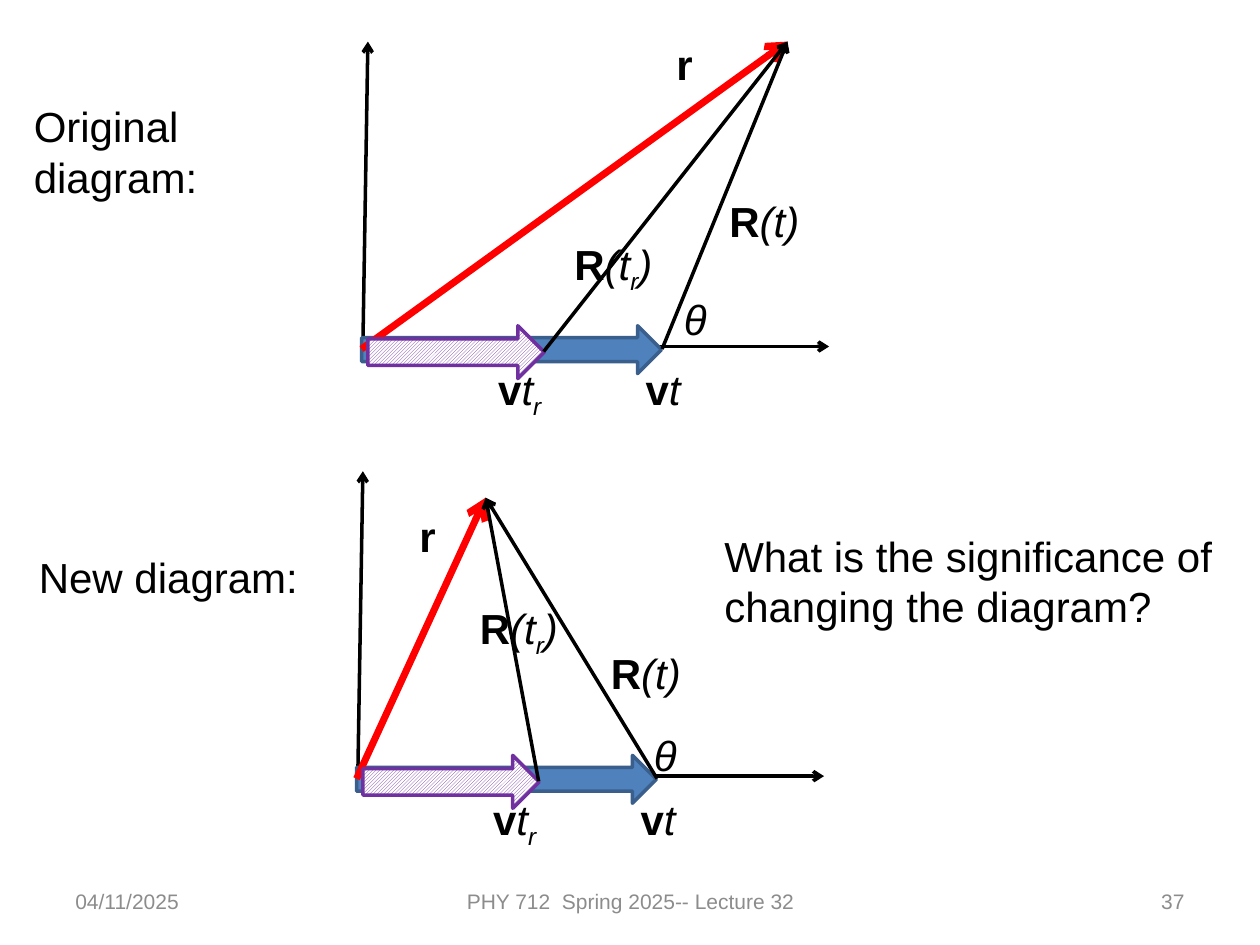
"""Build a slide comparing the original and new vector diagrams of a moving charge."""
from lxml.etree import SubElement
from pptx import Presentation
from pptx.dml.color import RGBColor
from pptx.enum.dml import MSO_PATTERN
from pptx.enum.shapes import MSO_CONNECTOR, MSO_SHAPE
from pptx.enum.text import MSO_ANCHOR, MSO_AUTO_SIZE, PP_ALIGN
from pptx.oxml.ns import qn
from pptx.util import Inches, Pt

prs = Presentation()
prs.slide_width, prs.slide_height = Inches(10), Inches(7.5)
COL, ROW = prs.slide_width / 100, prs.slide_height / 75
rgb = RGBColor.from_string
s = prs.slides.add_slide(prs.slide_layouts[6])


def add_text(x, y, w, h, runs, size=24, color="000000", align=PP_ALIGN.LEFT):
    """Add a text box from (text, style) runs; b is bold, i italic, s subscript."""
    sp = s.shapes.add_textbox(int(x * COL), int(y * ROW), int(w * COL), int(h * ROW))
    tf = sp.text_frame
    tf.word_wrap = True
    p = tf.paragraphs[0]
    p.alignment = align
    p.font.size, p.font.name = Pt(size), "Arial"
    p.font.color.rgb = rgb(color)
    for text, style in runs:
        r = p.add_run()
        r.text = text
        if "b" in style:
            r.font.bold = True
        if "i" in style:
            r.font.italic = True
        if "s" in style:
            r.font._element.set("baseline", "-25000")
    return tf


def add_arrow(x1, y1, x2, y2, color="000000", width=2):
    """Add a straight arrow that points at (x2, y2)."""
    c = s.shapes.add_connector(MSO_CONNECTOR.STRAIGHT, int(x1 * COL), int(y1 * ROW),
                               int(x2 * COL), int(y2 * ROW))
    c.line.color.rgb = rgb(color)
    c.line.width = Pt(width)
    SubElement(c.line._get_or_add_ln(), qn("a:tailEnd"), type="arrow")
    SubElement(c._element.spPr, qn("a:effectLst"))


for x, w, text, align in [(5, 23.3, "04/11/2025", PP_ALIGN.LEFT),
                          (34.2, 31.7, "PHY 712  Spring 2025-- Lecture 32", PP_ALIGN.CENTER),
                          (71.7, 23.3, "37", PP_ALIGN.RIGHT)]:
    tf = add_text(x, 69.5, w, 4, [(text, "")], 12, "8C8C8C", align)
    tf.vertical_anchor = MSO_ANCHOR.MIDDLE

R_T = [("R", "b"), ("(t)", "i")]
R_TR = [("R", "b"), ("(t", "i"), ("r", "is"), (")", "i")]
V_T = [("v", "b"), ("t", "i")]
V_TR = V_T + [("r", "is")]

diagrams = [
    (28.8, 27.5, 62.5, 3.3, (52.7, 2.6), (56.9, 15), (44.6, 18.4), (53.3, 22.8)),
    (28.4, 61.6, 38.55, 39.5, (32.3, 40), (47.5, 50.9), (37.1, 47.3), (50.9, 57.4)),
]
for ox, oy, tip_x, tip_y, r_at, rt_at, rtr_at, theta_at in diagrams:
    add_arrow(ox, oy, ox + 0.4, oy - 24.2)
    add_arrow(ox, oy, ox + 37, oy)
    for dx, w, h, line in [(-0.1, 23.8, 3.8, "3A5F8C"), (0.4, 14, 4.2, "7030A0")]:
        sp = s.shapes.add_shape(MSO_SHAPE.RIGHT_ARROW, int((ox + dx) * COL),
                                int((oy - 1.65) * ROW), int(w * COL), int(h * ROW))
        sp.shadow.inherit = False
        sp.line.color.rgb = rgb(line)
        sp.line.width = Pt(2)
        if dx < 0:
            sp.fill.solid()
            sp.fill.fore_color.rgb = rgb("4F81BD")
            add_arrow(ox - 0.1, oy + 0.2, tip_x, tip_y, "FF0000", 4)
            add_arrow(ox + 23.75, oy + 0.2, tip_x, tip_y)
        else:
            sp.fill.patterned()
            sp.fill.pattern = MSO_PATTERN.DARK_UPWARD_DIAGONAL
            sp.fill.fore_color.rgb = rgb("7030A0")
            sp.fill.back_color.rgb = rgb("FFFFFF")
            add_arrow(ox + 14.35, oy + 0.4, tip_x, tip_y)
    for (x, y), w, runs in [((ox + 21.45, oy + 0.85), 9.8, V_T),
                            ((ox + 9.75, oy + 0.85), 9.8, V_TR),
                            (r_at, 9.8, [("r", "b")]), (rt_at, 9.8, R_T),
                            (rtr_at, 9.8, R_TR), (theta_at, 4.2, [("θ", "i")])]:
        add_text(x, y, w, 5, runs).auto_size = MSO_AUTO_SIZE.SHAPE_TO_FIT_TEXT

for x, y, w, h, text in [(1.7, 7.5, 23.3, 9.1, "Original diagram:"),
                         (2.1, 43.3, 23.3, 5, "New diagram:"),
                         (56.5, 41.6, 44, 13.1,
                          "What is the significance of changing the diagram?")]:
    tf = add_text(x, y, w, h, [(text, "")])
    tf.auto_size = MSO_AUTO_SIZE.SHAPE_TO_FIT_TEXT

prs.save("out.pptx")
